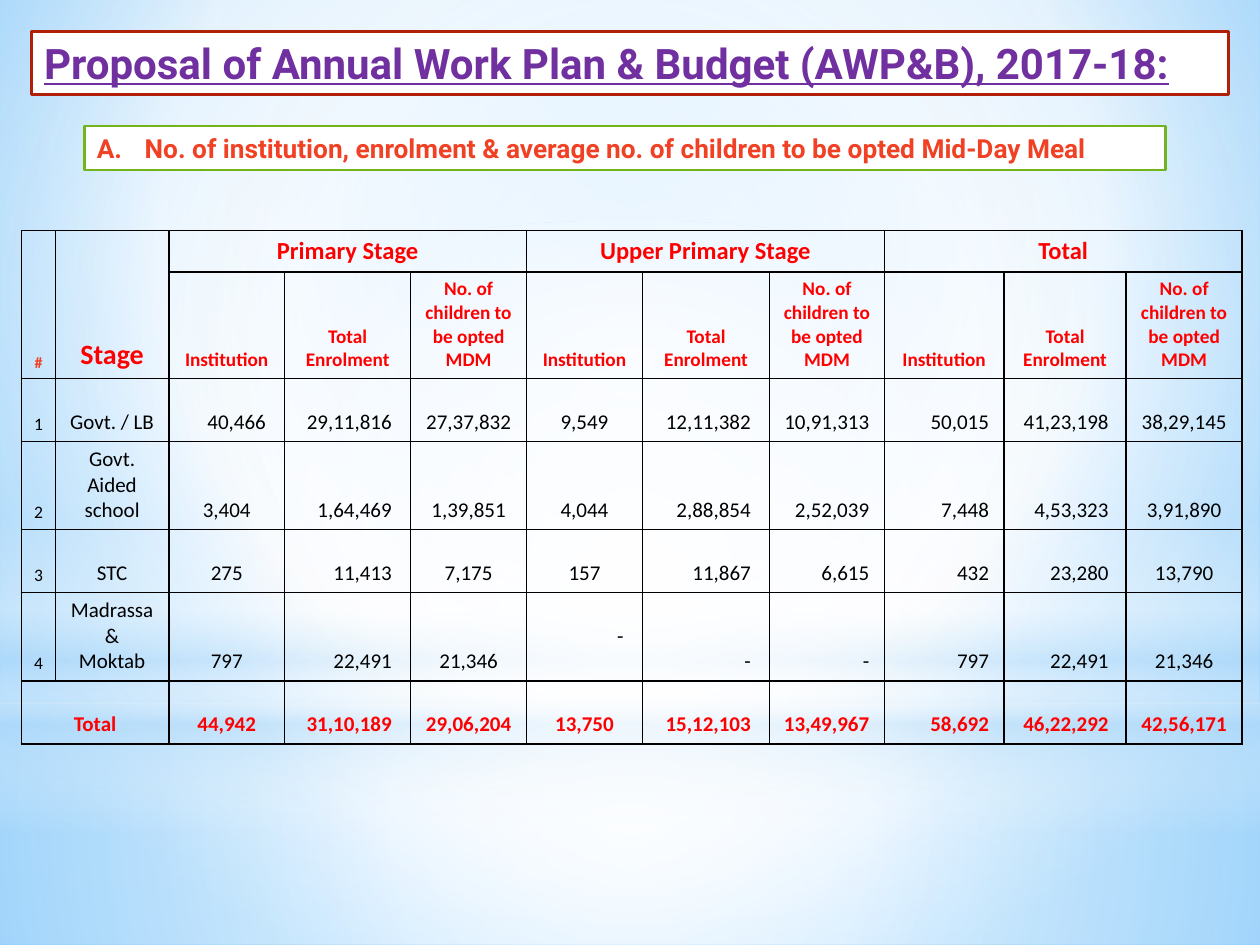
import pptx
import pptx.dml.color
import pptx.enum.shapes
import pptx.enum.text
import pptx.oxml
import pptx.oxml.ns
import pptx.util
from pptx.util import Inches

ALIGN = pptx.enum.text.PP_ALIGN
ANCHOR = pptx.enum.text.MSO_ANCHOR
SHAPE = pptx.enum.shapes.MSO_SHAPE
RED, ORANGE, BLACK, WHITE = "FF0000", "F14124", "000000", "FFFFFF"
NAMESPACE = pptx.oxml.ns.nsdecls("a")

COLUMN_WIDTHS = [0.27, 0.9, 0.92, 1, 0.92, 0.92, 1.01, 0.91, 0.95, 0.97, 0.92]
ROW_HEIGHTS = [0.33, 0.83, 0.5, 0.7, 0.5, 0.7, 0.5]
GROUPS = ["Primary Stage", "Upper Primary Stage", "Total"]
MEASURES = ["Institution", "Total Enrolment", "No. of children to be opted MDM"]
STAGES = [
    ("Govt. / LB", "40,466 29,11,816 27,37,832 9,549 12,11,382 10,91,313 50,015 41,23,198 38,29,145"),
    ("Govt. Aided school", "3,404 1,64,469 1,39,851 4,044 2,88,854 2,52,039 7,448 4,53,323 3,91,890"),
    ("STC", "275 11,413 7,175 157 11,867 6,615 432 23,280 13,790"),
    ("Madrassa&\nMoktab", "797 22,491 21,346 - - - 797 22,491 21,346"),
]
TOTALS = "44,942 31,10,189 29,06,204 13,750 15,12,103 13,49,967 58,692 46,22,292 42,56,171"
# Right margins of the right-aligned number columns; the others are centred
RIGHT_MARGINS = {3: 0.15, 6: 0.15, 7: 0.12, 8: 0.12, 9: 0.14}


def color(value):
    return pptx.dml.color.RGBColor.from_string(value)


def gradient(stops, direction):
    """Return a gradFill; each stop is position, colour and opacity in percent."""
    stop_xml = "".join(
        f'<a:gs pos="{position * 1000}"><a:srgbClr val="{value}">'
        f'<a:alpha val="{opacity * 1000}"/></a:srgbClr></a:gs>'
        for position, value, opacity in stops)
    return pptx.oxml.parse_xml(
        f'<a:gradFill {NAMESPACE} rotWithShape="1"><a:gsLst>{stop_xml}</a:gsLst>{direction}</a:gradFill>')


def circle(left, top, right, bottom):
    return (f'<a:path path="circle"><a:fillToRect l="{left * 1000}" t="{top * 1000}" '
            f'r="{right * 1000}" b="{bottom * 1000}"/></a:path>')


class SlideBuilder:
    def __init__(self, slide):
        self.slide = slide
        self.heading_font = "Roboto"
        self.table_font = "Calibri"

    def background(self, stops, direction):
        self.slide.background.fill.solid()
        properties = self.slide.element.find(".//" + pptx.oxml.ns.qn("p:bgPr"))
        properties.replace(properties[0], gradient(stops, direction))

    def glow(self, kind, top, height, stops, direction):
        """Add a full-width translucent gradient shape."""
        shape = self.slide.shapes.add_shape(kind, 0, Inches(top), Inches(10), Inches(height))
        shape.shadow.inherit = False
        shape.line.fill.background()
        shape.fill.background()
        properties = shape.element.spPr
        no_fill = properties.find(pptx.oxml.ns.qn("a:noFill"))
        properties.replace(no_fill, gradient(stops, direction))

    def run(self, paragraph, text, size, value, bold=True, font=None):
        run = paragraph.add_run()
        run.text = text
        run.font.name = font or self.table_font
        run.font.size = pptx.util.Pt(size)
        run.font.bold = bold
        run.font.color.rgb = color(value)
        return run

    def frame(self, shape, left, top, width, height, line):
        """Place a white outlined box and return its first paragraph."""
        shape.left, shape.top = Inches(left), Inches(top)
        shape.width, shape.height = Inches(width), Inches(height)
        shape.fill.solid()
        shape.fill.fore_color.rgb = color(WHITE)
        shape.line.color.rgb = color(line)
        shape.line.width = pptx.util.Pt(1.25)
        text_frame = shape.text_frame
        text_frame.word_wrap = True
        text_frame.auto_size = pptx.enum.text.MSO_AUTO_SIZE.NONE
        text_frame.vertical_anchor = ANCHOR.MIDDLE
        paragraph = text_frame.paragraphs[0]
        paragraph.alignment = ALIGN.LEFT
        return paragraph

    def title(self, text):
        shape = self.slide.shapes.title
        self.slide.shapes.element.append(shape.element)  # bring in front of the glows
        paragraph = self.frame(shape, 0.25, 0.25, 9.5, 0.5, "B01F07")
        self.run(paragraph, text, 24, "7030A0", font=self.heading_font).font.underline = True

    def lettered_heading(self, text):
        shape = self.slide.shapes.add_shape(SHAPE.RECTANGLE, 0, 0, 0, 0)
        shape.shadow.inherit = False
        paragraph = self.frame(shape, 0.67, 1, 8.58, 0.35, "72B41D")
        properties = paragraph._p.get_or_add_pPr()
        indent = Inches(0.38)
        properties.set("marL", str(indent))
        properties.set("indent", str(-indent))
        properties.append(pptx.oxml.parse_xml(f'<a:buFont {NAMESPACE} typeface="+mj-lt"/>'))
        properties.append(pptx.oxml.parse_xml(f'<a:buAutoNum {NAMESPACE} type="alphaUcPeriod"/>'))
        self.run(paragraph, text, 15, ORANGE, font=self.heading_font)

    def table(self, left, top):
        shape = self.slide.shapes.add_table(
            len(ROW_HEIGHTS), len(COLUMN_WIDTHS), Inches(left), Inches(top),
            Inches(sum(COLUMN_WIDTHS)), Inches(sum(ROW_HEIGHTS)))
        table = shape.table
        table.first_row = table.horz_banding = False
        for column, width in zip(table.columns, COLUMN_WIDTHS):
            column.width = Inches(width)
        for row, height in zip(table.rows, ROW_HEIGHTS):
            row.height = Inches(height)
        for cell in table.iter_cells():
            cell.fill.background()
            cell.margin_top = Inches(0.04)
            self.borders(cell)
        return table

    def borders(self, cell):
        properties = cell._tc.get_or_add_tcPr()
        for index, side in enumerate(("lnL", "lnR", "lnT", "lnB")):
            properties.insert(index, pptx.oxml.parse_xml(
                f'<a:{side} {NAMESPACE} w="12700"><a:solidFill><a:srgbClr val="{BLACK}"/>'
                f'</a:solidFill></a:{side}>'))

    def cell(self, cell, text, size, value=BLACK, bold=False, align=ALIGN.CENTER):
        cell.vertical_anchor = ANCHOR.BOTTOM
        for index, line in enumerate(text.split("\n")):
            text_frame = cell.text_frame
            paragraph = text_frame.add_paragraph() if index else text_frame.paragraphs[0]
            paragraph.alignment = align
            self.run(paragraph, line, size, value, bold)

    def numbers(self, table, row, values, **style):
        for column, value in enumerate(values.split(), start=2):
            cell = table.cell(row, column)
            cell.margin_left = Inches(0.05)
            # The largest institution count and the first dash also sit to the right
            is_right = column in RIGHT_MARGINS or value in ("40,466", "-")
            cell.margin_right = Inches(RIGHT_MARGINS.get(column, 0.15) if is_right else 0.05)
            self.cell(cell, value, 12, align=ALIGN.RIGHT if is_right else ALIGN.CENTER, **style)
            if value == "-" and column == 5:
                cell.vertical_anchor = ANCHOR.MIDDLE


def fill_table(builder):
    table = builder.table(0.17, 1.83)
    for column, (text, size, value) in enumerate([("#", 9, ORANGE), ("Stage", 16, RED)]):
        table.cell(0, column).merge(table.cell(1, column))
        builder.cell(table.cell(0, column), text, size, value, True)
    for group, name in enumerate(GROUPS):
        first = 2 + group * len(MEASURES)
        table.cell(0, first).merge(table.cell(0, first + len(MEASURES) - 1))
        builder.cell(table.cell(0, first), name, 14, RED, True)
        for offset, measure in enumerate(MEASURES):
            builder.cell(table.cell(1, first + offset), measure, 11, RED, True)
    for number, (stage, values) in enumerate(STAGES, start=1):
        row = number + 1
        number_cell = table.cell(row, 0)
        number_cell.margin_left = number_cell.margin_right = Inches(0.05)
        builder.cell(number_cell, str(number), 10)
        builder.cell(table.cell(row, 1), stage, 12)
        builder.numbers(table, row, values)
    last = len(ROW_HEIGHTS) - 1
    table.cell(last, 0).merge(table.cell(last, 1))
    builder.cell(table.cell(last, 0), "Total", 12, RED, True)
    builder.numbers(table, last, TOTALS, value=RED, bold=True)


def main():
    presentation = pptx.Presentation()
    presentation.slide_width, presentation.slide_height = Inches(10), Inches(7.5)
    builder = SlideBuilder(presentation.slides.add_slide(presentation.slide_layouts[5]))
    pale = "B4DCFA"
    center = circle(50, 50, 50, 50)
    builder.background([(0, "9ED5FF", 100), (60, WHITE, 100), (100, "5BB9FF", 100)],
                       circle(20, 10, 20, 60))
    builder.glow(SHAPE.RECTANGLE, 5.58, 1.92, [(0, WHITE, 91), (37, WHITE, 76), (100, pale, 79)], center)
    builder.glow(SHAPE.RECTANGLE, 0, 5.58, [(0, WHITE, 89), (48, WHITE, 62), (100, pale, 79)], center)
    builder.glow(SHAPE.RECTANGLE, 4.12, 2.5,
                 [(0, WHITE, 0), (29, WHITE, 30), (45, pale, 40), (55, WHITE, 26),
                  (65, pale, 60), (100, WHITE, 0)], '<a:lin ang="5400000" scaled="0"/>')
    builder.glow(SHAPE.OVAL, 1.75, 5.58, [(0, WHITE, 100), (56, WHITE, 0)], center)
    builder.title("Proposal of Annual Work Plan & Budget (AWP&B), 2017-18:")
    builder.lettered_heading(
        "No. of institution, enrolment & average no. of children to be opted Mid-Day Meal")
    fill_table(builder)
    presentation.save("out.pptx")


if __name__ == "__main__":
    main()
